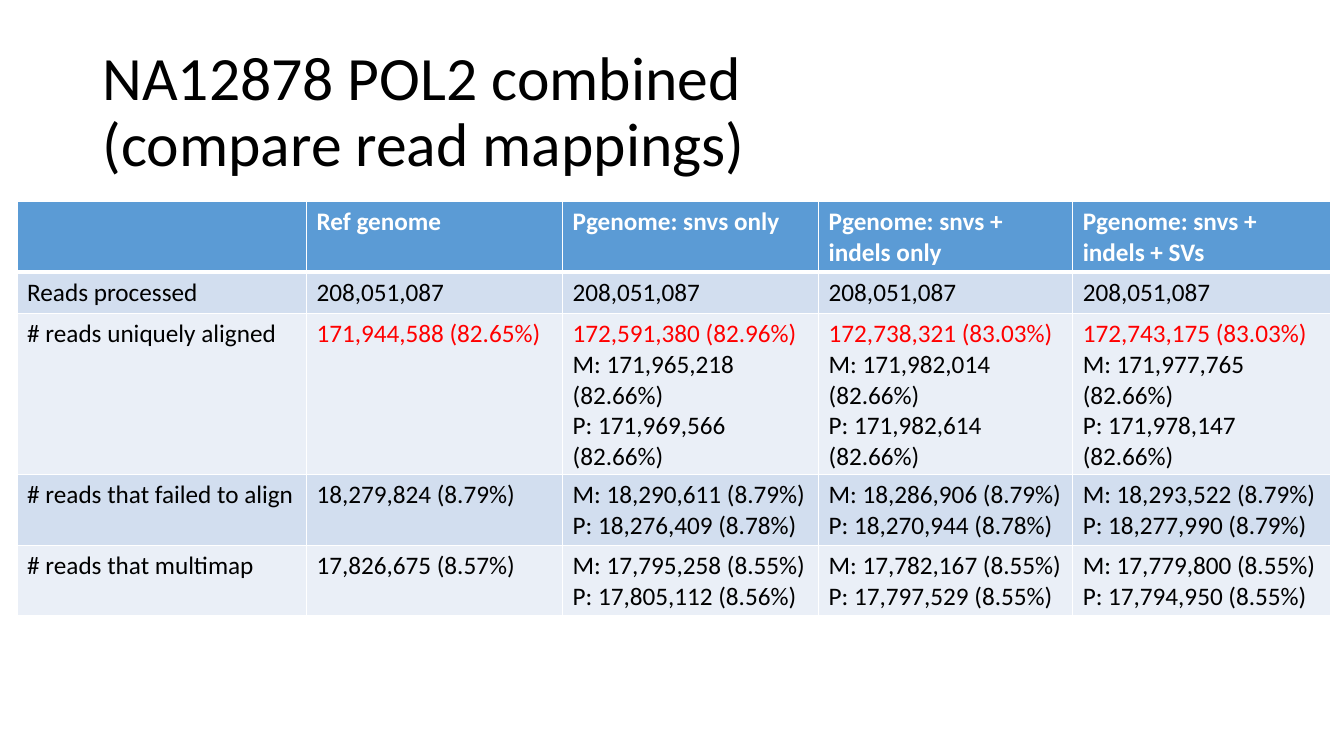
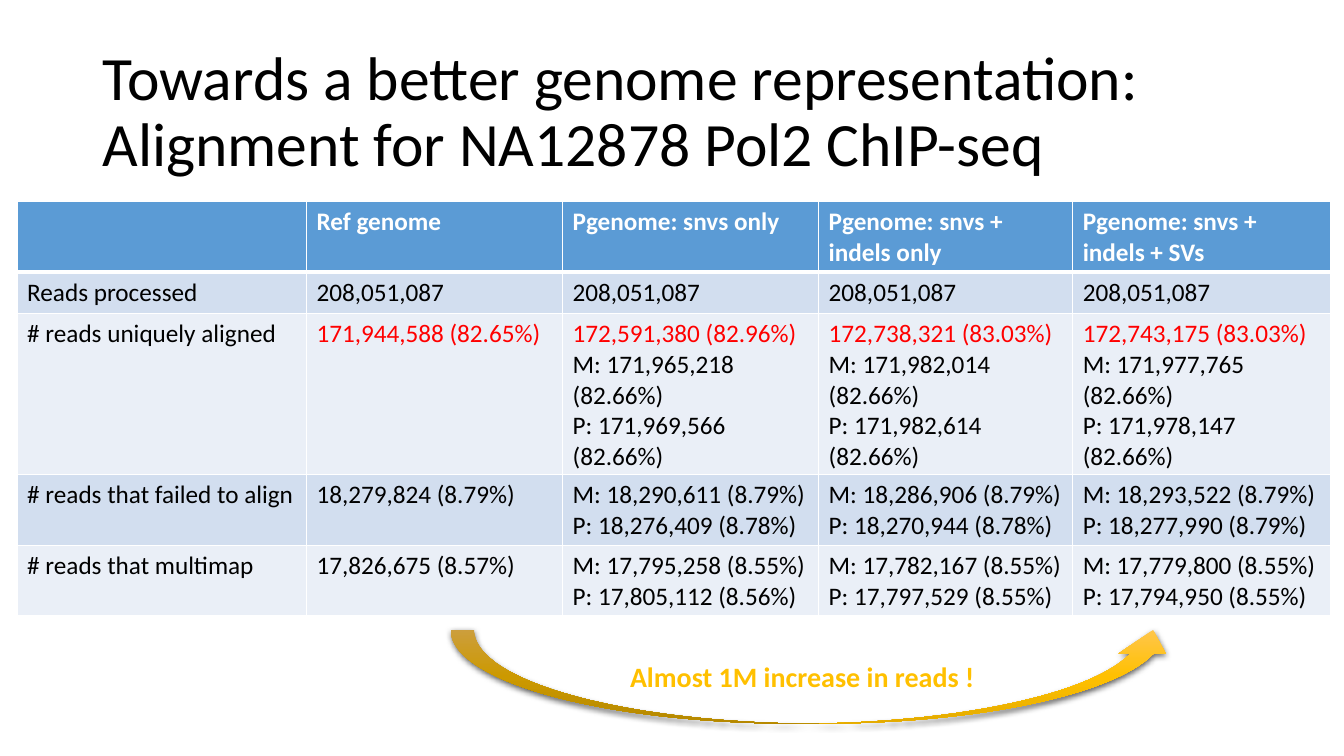
from copy import deepcopy

from lxml.etree import SubElement
from pptx import Presentation
from pptx.dml.color import RGBColor
from pptx.enum.shapes import MSO_SHAPE
from pptx.enum.text import MSO_ANCHOR, MSO_AUTO_SIZE
from pptx.oxml.ns import qn
from pptx.util import Inches, Pt

FONT = "Calibri"
COLORS = {
    "text": "000000", "white": "FFFFFF", "highlight": "FF0000",
    "header": "5B9BD5", "band_dark": "D2DEEF", "band_light": "EAEFF7",
    "gold": "FFC000", "gold_light": "FFC64B", "gold_dark": "E3AB00",
}
TITLES = [
    "NA12878 POL2 combined\n(compare read mappings)",
    "Towards a better genome representation:\nAlignment for NA12878 Pol2 ChIP-seq",
]
CALLOUT = "Almost 1M increase in reads !"

COLUMN_WIDTHS = [2.87, 2.54, 2.54, 2.52, 2.56]
ROW_HEIGHT = 0.41
UNIQUE_ROW = 2
# One list of lines per cell.
ROWS = [
    [[""], ["Ref genome"], ["Pgenome: snvs only"],
     ["Pgenome: snvs + indels only"], ["Pgenome: snvs + indels + SVs"]],
    [["Reads processed"]] + [["208,051,087"]] * 4,
    [["# reads uniquely aligned"],
     ["171,944,588 (82.65%)"],
     ["172,591,380 (82.96%)", "M: 171,965,218 (82.66%)", "P: 171,969,566 (82.66%)"],
     ["172,738,321 (83.03%)", "M: 171,982,014 (82.66%)", "P: 171,982,614 (82.66%)"],
     ["172,743,175 (83.03%)", "M: 171,977,765 (82.66%)", "P: 171,978,147 (82.66%)"]],
    [["# reads that failed to align"],
     ["18,279,824 (8.79%)"],
     ["M: 18,290,611 (8.79%)", "P: 18,276,409 (8.78%)"],
     ["M: 18,286,906 (8.79%)", "P: 18,270,944 (8.78%)"],
     ["M: 18,293,522 (8.79%)", "P: 18,277,990 (8.79%)"]],
    [["# reads that multimap"],
     ["17,826,675 (8.57%)"],
     ["M: 17,795,258 (8.55%)", "P: 17,805,112 (8.56%)"],
     ["M: 17,782,167 (8.55%)", "P: 17,797,529 (8.55%)"],
     ["M: 17,779,800 (8.55%)", "P: 17,794,950 (8.55%)"]],
]


def rgb(name):
    return RGBColor.from_string(COLORS[name])


def style_font(font, size, color, bold=False):
    font.name, font.size, font.bold = FONT, Pt(size), bold
    font.color.rgb = rgb(color)


def add_text(slide, box, text, size, color, bold=False):
    shape = slide.shapes.add_textbox(*map(Inches, box))
    paragraph = shape.text_frame.paragraphs[0]
    paragraph.text = text
    for run in paragraph.runs:
        style_font(run.font, size, color, bold)
    return shape.text_frame


def add_title(slide, text):
    frame = add_text(slide, (0.92, 0.4, 11.5, 1.45), text, 44, "text")
    frame.word_wrap = True
    frame.vertical_anchor = MSO_ANCHOR.MIDDLE
    frame.paragraphs[0].line_spacing = 0.9


def set_borders(cell, bottom):
    properties = cell._tc.get_or_add_tcPr()
    for side, width in (("L", 1), ("R", 1), ("T", 1), ("B", bottom)):
        line = SubElement(properties, qn(f"a:ln{side}"), w=str(Pt(width)))
        fill = SubElement(line, qn("a:solidFill"))
        SubElement(fill, qn("a:srgbClr"), val=COLORS["white"])


def fill_cell(cell, lines, row, column):
    is_header = row == 0
    set_borders(cell, 3 if is_header else 1)
    cell.fill.solid()
    band = "band_dark" if row % 2 else "band_light"
    cell.fill.fore_color.rgb = rgb("header" if is_header else band)
    cell.text_frame.text = "\n".join(lines)
    for index, paragraph in enumerate(cell.text_frame.paragraphs):
        is_total = row == UNIQUE_ROW and column > 0 and index == 0
        color = "white" if is_header else "highlight" if is_total else "text"
        style_font(paragraph.font, 18, color, is_header)
        for run in paragraph.runs:
            style_font(run.font, 18, color, is_header)


def add_read_table(slide):
    table = slide.shapes.add_table(
        len(ROWS), len(COLUMN_WIDTHS), Inches(0.17), Inches(2),
        Inches(sum(COLUMN_WIDTHS)), Inches(ROW_HEIGHT * len(ROWS))).table
    for column, width in zip(table.columns, COLUMN_WIDTHS):
        column.width = Inches(width)
    for row, cells in enumerate(ROWS):
        for column, lines in enumerate(cells):
            fill_cell(table.cell(row, column), lines, row, column)


def add_increase_arrow(slide):
    arrow = slide.shapes.add_shape(
        MSO_SHAPE.CURVED_UP_ARROW, *map(Inches, (4.47, 6.25, 7.2, 0.93)))
    arrow.line.fill.background()
    arrow.fill.gradient()
    arrow.fill.gradient_angle = 270
    properties = arrow._element.spPr
    stop_list = properties.find(f".//{qn('a:gsLst')}")
    stop_list.append(deepcopy(stop_list[0]))
    stops = zip(arrow.fill.gradient_stops, (0, 0.5, 1), ("gold_light", "gold", "gold_dark"))
    for stop, position, color in stops:
        stop.position = position
        stop.color.rgb = rgb(color)

    arrow.shadow.inherit = False
    shadow = SubElement(
        properties.find(qn("a:effectLst")), qn("a:outerShdw"), blurRad=str(Pt(4.5)),
        dist=str(Pt(1.5)), dir="5400000", rotWithShape="0")
    shadow_color = SubElement(shadow, qn("a:srgbClr"), val=COLORS["text"])
    SubElement(shadow_color, qn("a:alpha"), val="63000")


def add_callout(slide):
    frame = add_text(slide, (6.15, 6.49, 3.65, 0.44), CALLOUT, 20, "gold", True)
    frame.word_wrap = False
    frame.auto_size = MSO_AUTO_SIZE.SHAPE_TO_FIT_TEXT


def main():
    presentation = Presentation()
    presentation.slide_width, presentation.slide_height = Inches(13.33), Inches(7.5)
    for title in TITLES:
        slide = presentation.slides.add_slide(presentation.slide_layouts[6])
        add_title(slide, title)
        add_read_table(slide)
    add_increase_arrow(slide)
    add_callout(slide)
    presentation.save("out.pptx")


if __name__ == "__main__":
    main()
